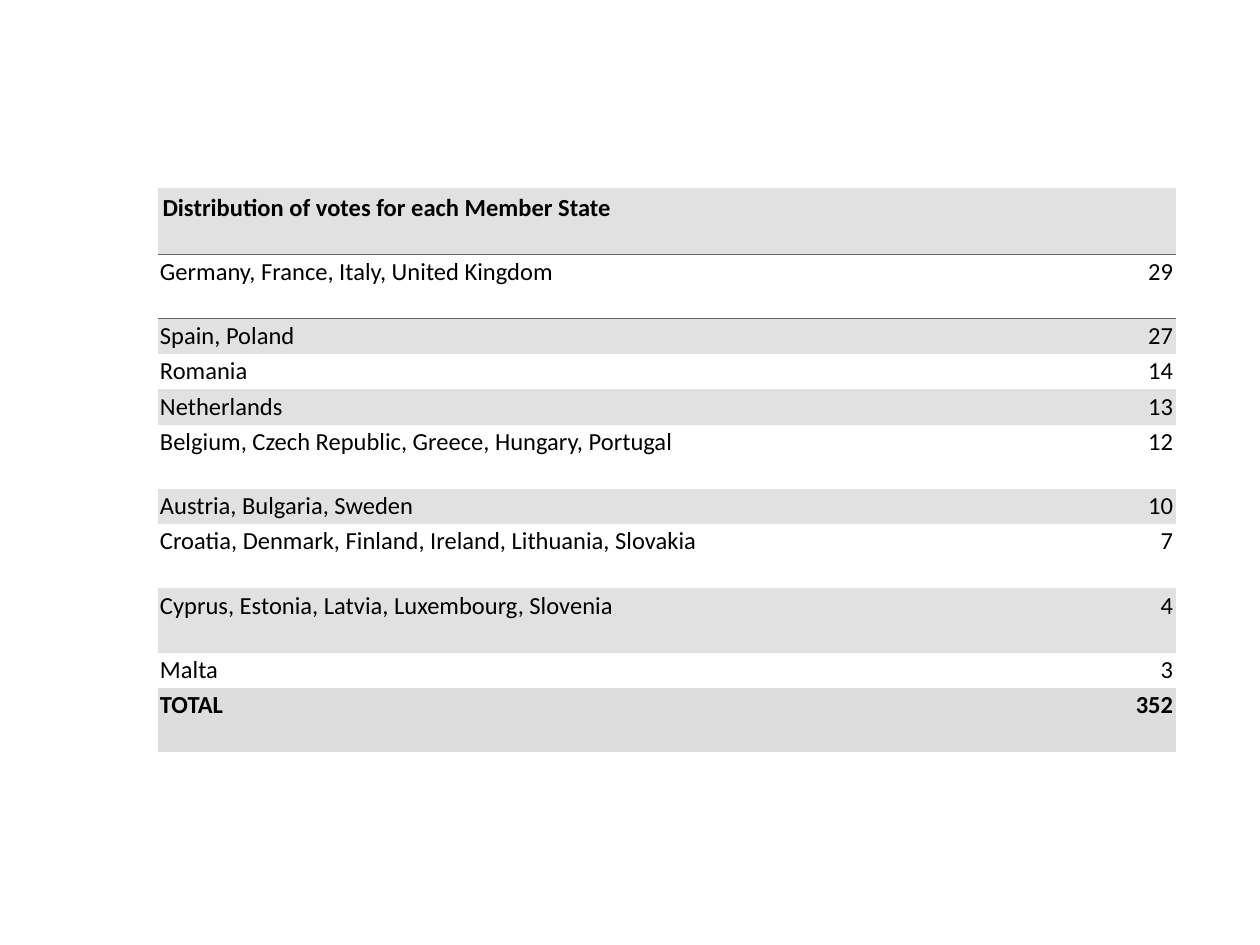
from lxml import etree
from pptx import Presentation
from pptx.dml.color import RGBColor
from pptx.enum.text import PP_ALIGN
from pptx.oxml.ns import qn
from pptx.util import Inches, Pt

LEFT, RIGHT = PP_ALIGN.LEFT, PP_ALIGN.RIGHT
BLACK = RGBColor(0x00, 0x00, 0x00)
WHITE = RGBColor(0xFF, 0xFF, 0xFF)
BAND_GREY = RGBColor(0xE1, 0xE1, 0xE1)
TOTAL_GREY = RGBColor(0xDD, 0xDD, 0xDD)
RULE_GREY = RGBColor(0x66, 0x66, 0x66)
NO_STYLE_NO_GRID = "{2D5ABB26-0587-4C30-8999-92F81FD0307C}"

FONT_NAME, FONT_SIZE = "Calibri", Pt(14)
TABLE_LEFT, TABLE_TOP = Inches(1.25), Inches(1.49)
COLUMN_WIDTHS = Inches(7.28), Inches(0.8)
HEADER_HEIGHT, TALL, SHORT = Inches(0.53), Inches(0.51), Inches(0.28)

TITLE = "Distribution of votes for each Member State"
VOTES = [
    ("Germany, France, Italy, United Kingdom", 29, TALL),
    ("Spain, Poland", 27, SHORT),
    ("Romania", 14, SHORT),
    ("Netherlands", 13, SHORT),
    ("Belgium, Czech Republic, Greece, Hungary, Portugal", 12, TALL),
    ("Austria, Bulgaria, Sweden", 10, SHORT),
    ("Croatia, Denmark, Finland, Ireland, Lithuania, Slovakia", 7, TALL),
    ("Cyprus, Estonia, Latvia, Luxembourg, Slovenia", 4, TALL),
    ("Malta", 3, SHORT),
    ("TOTAL", 352, TALL),
]


def add_plain_table(slide, heights):
    """Add an unstyled table with the given row heights."""
    table = slide.shapes.add_table(
        len(heights), len(COLUMN_WIDTHS), TABLE_LEFT, TABLE_TOP,
        sum(COLUMN_WIDTHS), sum(heights)).table
    table.first_row = table.horz_banding = False
    table._tbl.tblPr.find(qn("a:tableStyleId")).text = NO_STYLE_NO_GRID
    for column, width in zip(table.columns, COLUMN_WIDTHS):
        column.width = width
    for row, height in zip(table.rows, heights):
        row.height = height
    return table


def fill_cell(cell, text, color, alignment=LEFT, bold=False, margin=Inches(0.02)):
    """Write the text of a cell and set its fill, font and margins."""
    cell.margin_left = cell.margin_right = margin
    cell.margin_top = cell.margin_bottom = margin
    cell.fill.solid()
    cell.fill.fore_color.rgb = color
    cell.text = text
    paragraph = cell.text_frame.paragraphs[0]
    paragraph.alignment = alignment
    font = paragraph.font
    font.name, font.size, font.bold = FONT_NAME, FONT_SIZE, bold
    font.color.rgb = BLACK


def add_rule(cell, side):
    """Draw a thin grey border on one side of a cell."""
    line = etree.Element(qn(f"a:ln{side}"), w=str(Pt(0.75)))
    fill = etree.SubElement(line, qn("a:solidFill"))
    etree.SubElement(fill, qn("a:srgbClr"), val=str(RULE_GREY))
    cell._tc.get_or_add_tcPr().insert(0, line)


def add_header(table):
    """Fill the merged heading row and rule it off from the votes."""
    heading = table.cell(0, 0)
    heading.merge(table.cell(0, 1))
    fill_cell(heading, TITLE, BAND_GREY, bold=True, margin=Inches(0.04))
    for column in range(len(COLUMN_WIDTHS)):
        add_rule(table.cell(0, column), "B")
        add_rule(table.cell(1, column), "T")


def add_votes(table):
    """Fill the banded rows of votes and the bold total."""
    for row, (states, votes, _) in enumerate(VOTES, start=1):
        is_total = row == len(VOTES)
        band = WHITE if row % 2 else BAND_GREY
        color = TOTAL_GREY if is_total else band
        fill_cell(table.cell(row, 0), states, color, bold=is_total)
        fill_cell(table.cell(row, 1), str(votes), color, RIGHT, is_total)


def main():
    """Build the slide and save it."""
    presentation = Presentation()
    presentation.slide_width, presentation.slide_height = Inches(10), Inches(7.5)
    slide = presentation.slides.add_slide(presentation.slide_layouts[6])
    table = add_plain_table(slide, [HEADER_HEIGHT] + [row[2] for row in VOTES])
    add_header(table)
    add_votes(table)
    presentation.save("out.pptx")


if __name__ == "__main__":
    main()
